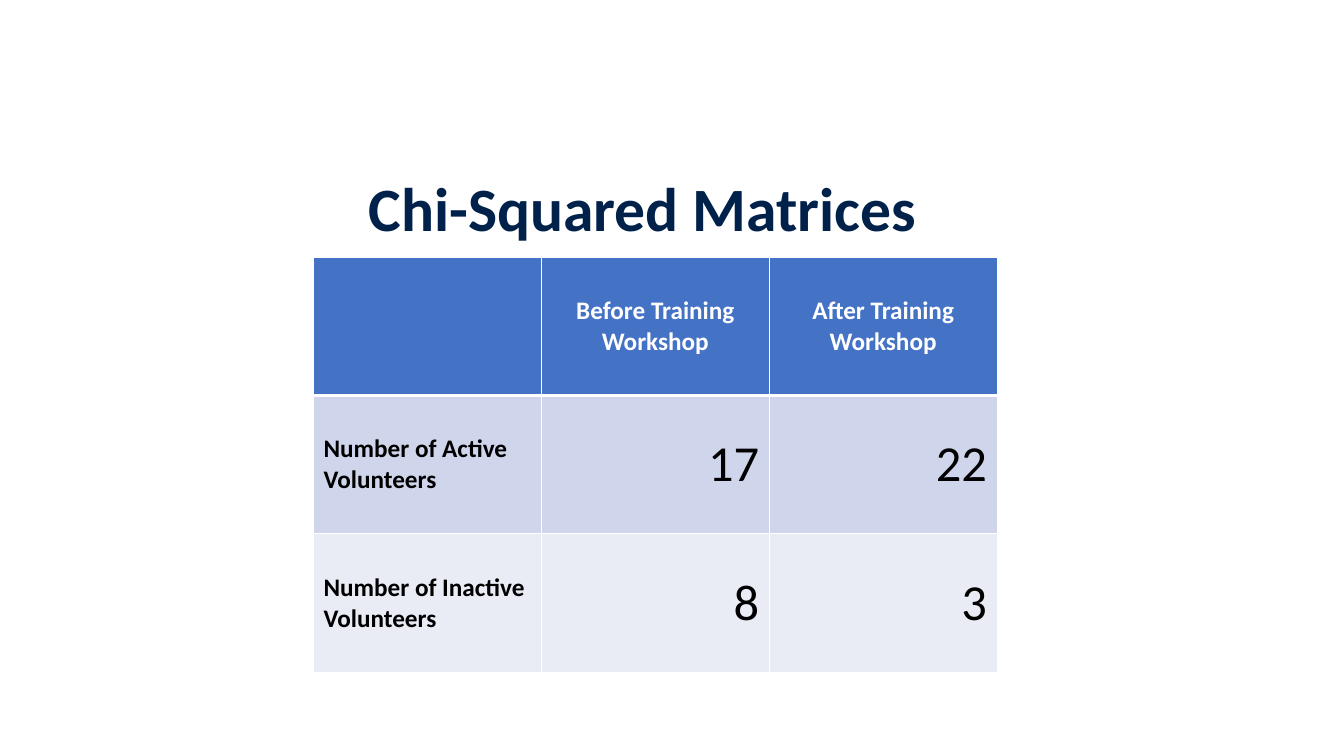
from dataclasses import dataclass

from lxml.etree import SubElement
from pptx import Presentation
from pptx.dml.color import RGBColor
from pptx.enum.text import MSO_ANCHOR, PP_ALIGN
from pptx.oxml.ns import qn
from pptx.util import Inches, Pt


@dataclass(frozen=True)
class Theme:
    font: str = "Calibri"
    navy: str = "00214A"
    header: str = "4472C4"
    bands: tuple = ("CFD5EA", "E9EBF5")
    white: str = "FFFFFF"
    black: str = "000000"
    title_size: int = 44
    label_size: int = 18
    count_size: int = 36


THEME = Theme()
TITLE = "Chi-Squared Matrices"
MATRIX = [
    ["", "Before Training Workshop", "After Training Workshop"],
    ["Number of Active Volunteers", "17", "22"],
    ["Number of Inactive Volunteers", "8", "3"],
]


def format_paragraph(paragraph, size, color, bold, align):
    paragraph.alignment = align
    font = paragraph.font
    font.name = THEME.font
    font.size = Pt(size)
    font.bold = bold
    font.color.rgb = RGBColor.from_string(color)


def add_title(slide, text):
    title = slide.shapes.title
    title.left, title.top = Inches(0.47), Inches(1.64)
    title.width, title.height = Inches(11.81), Inches(0.91)
    title.text_frame.text = text
    title.text_frame.vertical_anchor = MSO_ANCHOR.MIDDLE
    heading = title.text_frame.paragraphs[0]
    heading.line_spacing = 0.9
    format_paragraph(heading, THEME.title_size, THEME.navy, True, PP_ALIGN.CENTER)


def set_borders(cell, **widths):
    """Draw white cell borders; widths maps L, R, T and B to points."""
    properties = cell._tc.get_or_add_tcPr()
    for side, width in widths.items():
        line = SubElement(properties, qn(f"a:ln{side}"), w=str(Pt(width)))
        fill = SubElement(line, qn("a:solidFill"))
        SubElement(fill, qn("a:srgbClr"), val=THEME.white)


def fill_cell(cell, text, row, column):
    is_header = row == 0
    is_count = row > 0 and column > 0
    set_borders(cell, L=1, R=1, T=3 if row == 1 else 1, B=3 if is_header else 1)
    cell.fill.solid()
    background = THEME.header if is_header else THEME.bands[(row - 1) % 2]
    cell.fill.fore_color.rgb = RGBColor.from_string(background)
    cell.vertical_anchor = MSO_ANCHOR.MIDDLE
    cell.text = text
    if is_header:
        align = PP_ALIGN.CENTER
    else:
        align = PP_ALIGN.RIGHT if is_count else PP_ALIGN.LEFT
    format_paragraph(
        cell.text_frame.paragraphs[0],
        THEME.count_size if is_count else THEME.label_size,
        THEME.white if is_header else THEME.black,
        not is_count,
        align,
    )


def add_matrix(slide, rows):
    table = slide.shapes.add_table(
        len(rows), len(rows[0]),
        Inches(3.11), Inches(2.55), Inches(6.78), Inches(4.12),
    ).table
    for row, texts in enumerate(rows):
        for column, text in enumerate(texts):
            fill_cell(table.cell(row, column), text, row, column)


def main():
    presentation = Presentation()
    presentation.slide_width = Inches(13.33)
    presentation.slide_height = Inches(7.5)
    slide = presentation.slides.add_slide(presentation.slide_layouts[5])
    add_title(slide, TITLE)
    add_matrix(slide, MATRIX)
    presentation.save("out.pptx")


if __name__ == "__main__":
    main()
